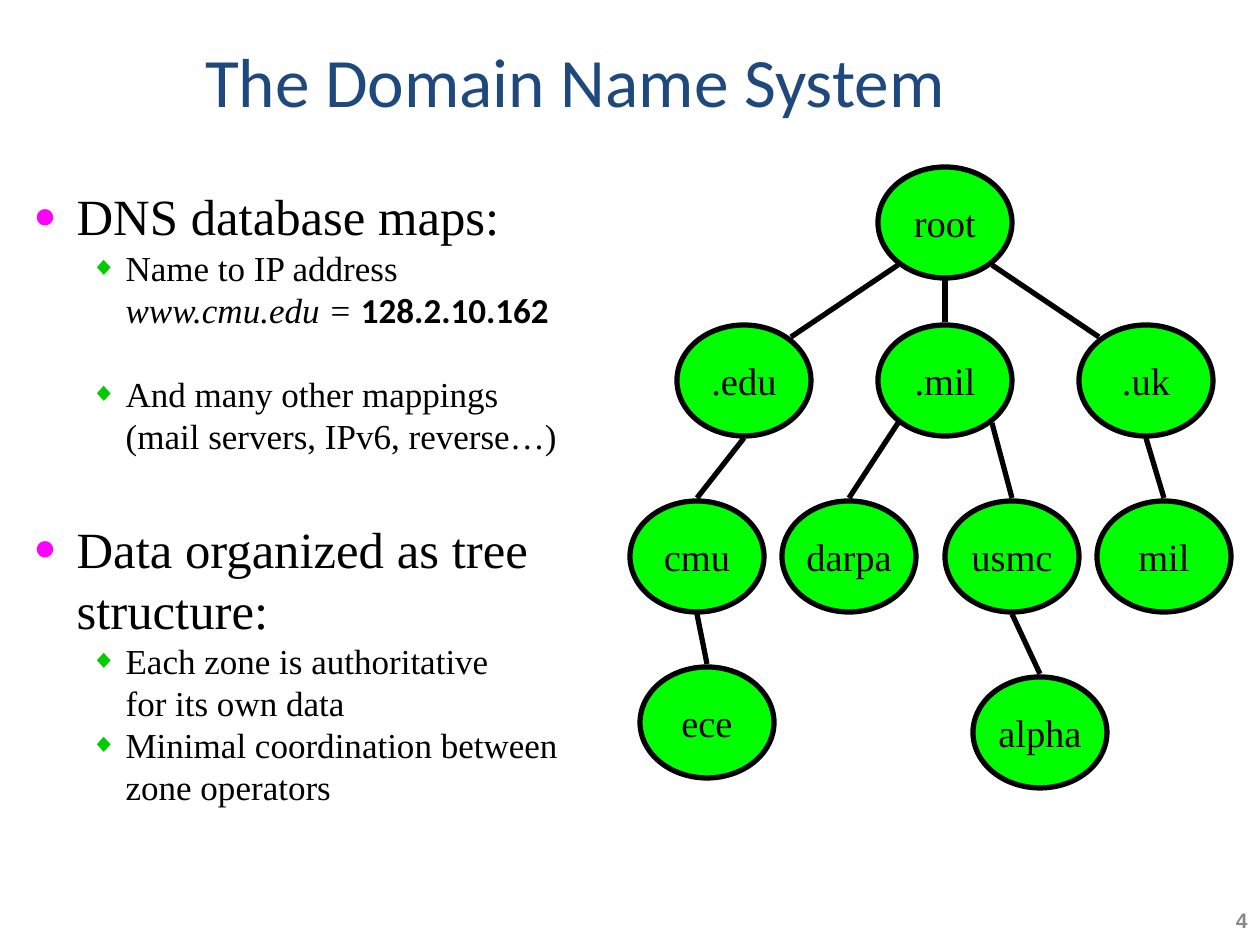
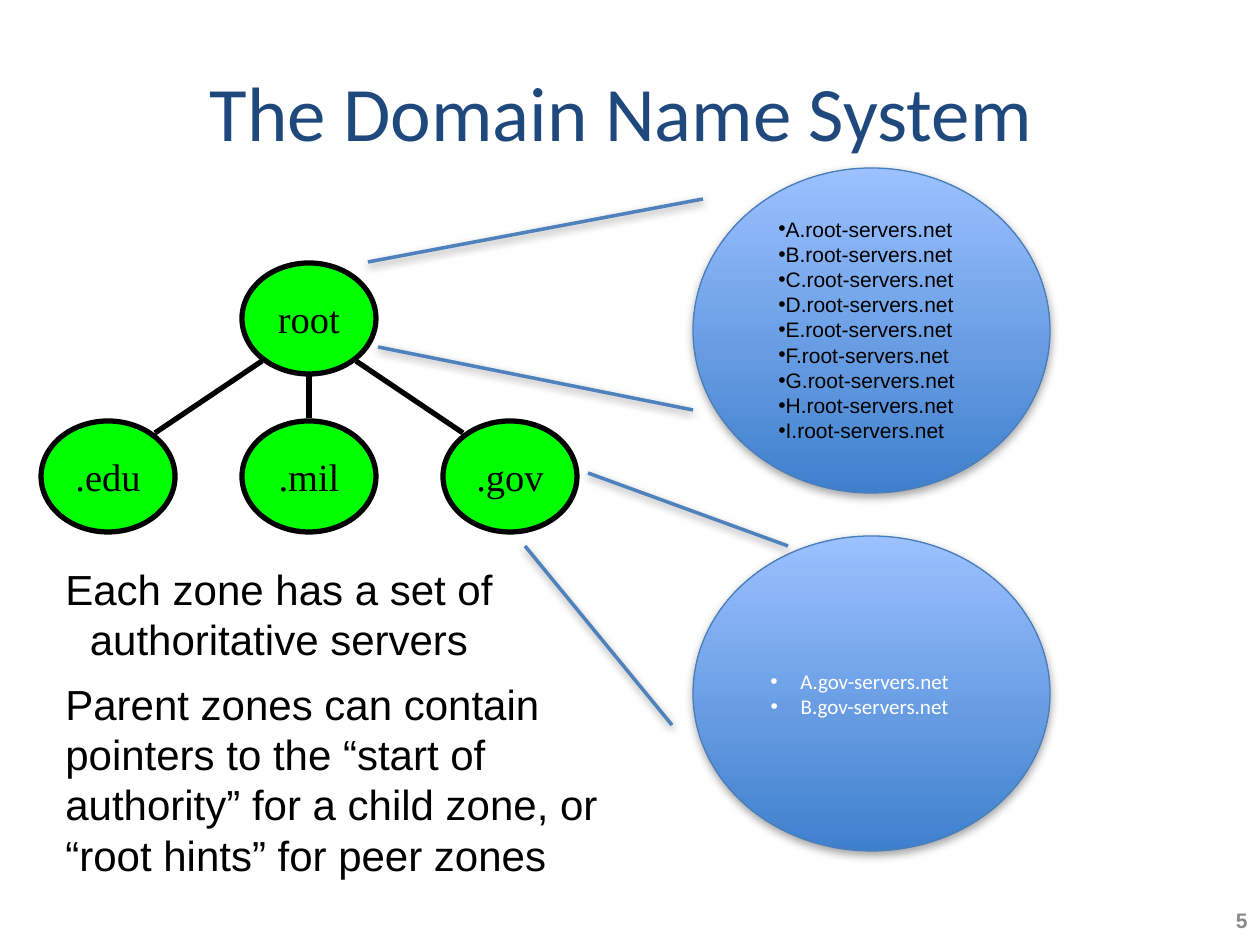
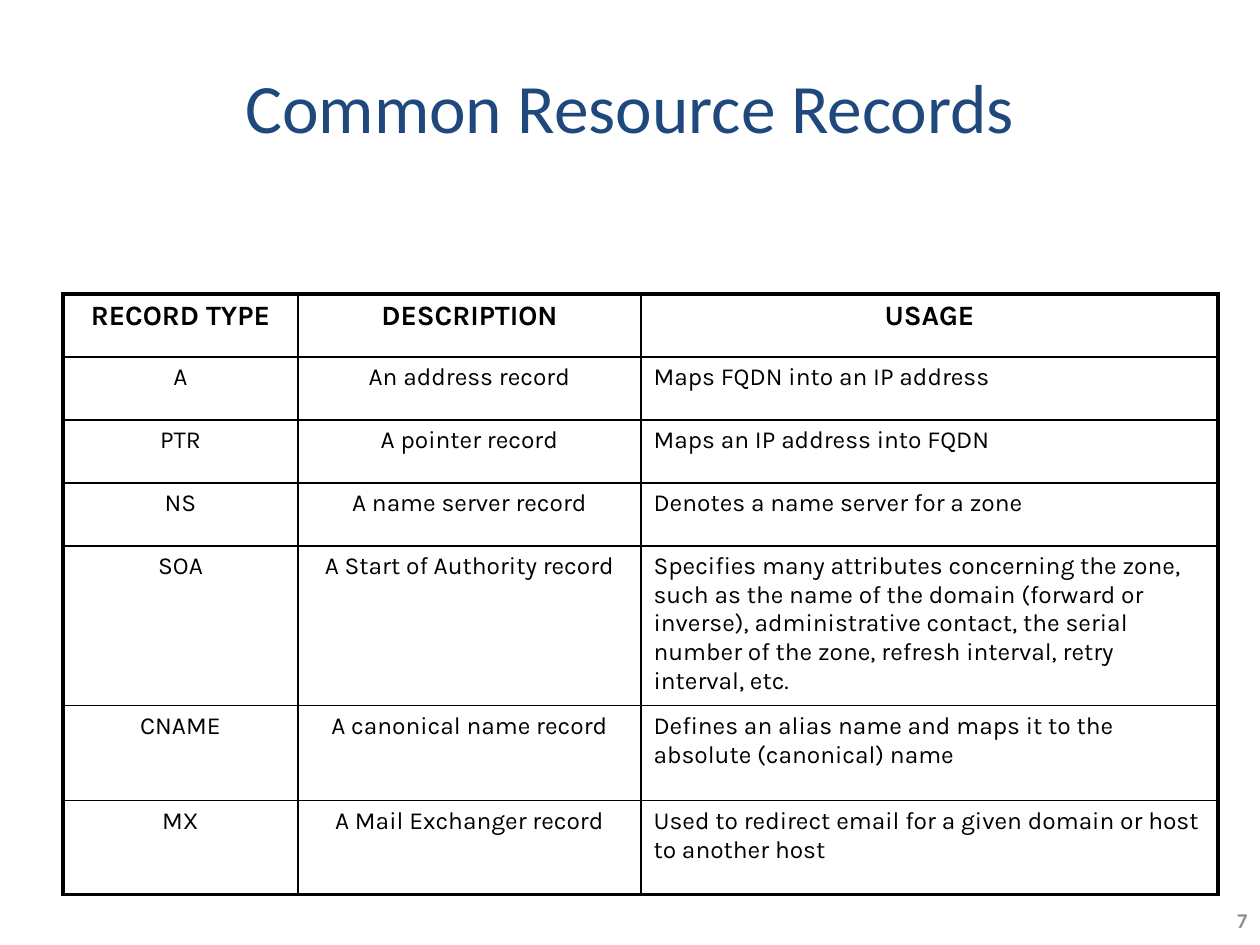
import lxml.etree
import pptx
import pptx.dml.color
import pptx.enum.shapes
import pptx.enum.text
import pptx.oxml.ns
import pptx.util

PX_PER_INCH = 126
SERIF, SANS, TITLE_FONT, TABLE_FONT = "Times New Roman", "Arial", "Calibri", "Karla"
BLACK, WHITE, NAVY, GREY = "000000", "FFFFFF", "1F497D", "898989"
NODE_GREEN, LEVEL_COLORS = "00FF00", ("FF00FF", "00CC00")
BLUE_DARK, BLUE_LIGHT, BLUE_EDGE, BLUE_LINE = "3F80CD", "9BC1FF", "4A7EBB", "4F81BD"
LINE_FACTOR = 1.2

ALIGN = pptx.enum.text.PP_ALIGN
MIDDLE = pptx.enum.text.MSO_ANCHOR.MIDDLE
OVAL = pptx.enum.shapes.MSO_SHAPE.OVAL
STRAIGHT = pptx.enum.shapes.MSO_CONNECTOR.STRAIGHT

NODE_WIDTH, NODE_HEIGHT = 134, 111
BRANCH, LEVEL = 201, 158
ANCHORS = {
    "top": (0, -58),
    "top left": (-47, -43),
    "top right": (47, -43),
    "bottom": (0, 58),
    "bottom left": (-47, 43),
    "bottom right": (47, 43),
}
ROOT_LINKS = ("bottom left", "top right"), ("bottom", "top"), ("bottom right", "top left")

RECORDS = [
    ("RECORD TYPE", "DESCRIPTION", "USAGE"),
    ("A", "An address record", "Maps FQDN into an IP address"),
    ("PTR", "A pointer record", "Maps an IP address into FQDN"),
    ("NS", "A name server record", "Denotes a name server for a zone"),
    ("SOA", "A Start of Authority record",
     "Specifies many attributes concerning the zone, such as the name of the domain "
     "(forward or inverse), administrative contact, the serial number of the zone, "
     "refresh interval, retry interval, etc."),
    ("CNAME", "A canonical name record",
     "Defines an alias name and maps it to the absolute (canonical) name"),
    ("MX", "A Mail Exchanger record",
     "Used to redirect email for a given domain or host to another host"),
]


def px(length):
    return pptx.util.Emu(round(length * 914400 / PX_PER_INCH))


def rgb(color):
    return pptx.dml.color.RGBColor.from_string(color)


def add_xml(parent, tag, **attributes):
    return lxml.etree.SubElement(parent, pptx.oxml.ns.qn(tag), attributes)


def style(para, size, font, color=BLACK, align=ALIGN.LEFT, bold=False):
    para.alignment = align
    for span in para.runs:
        span.font.size = pptx.util.Pt(size)
        span.font.name = font
        span.font.bold = bold
        span.font.color.rgb = rgb(color)


def set_pitch(para, size):
    para.line_spacing = pptx.util.Pt(round(size * LINE_FACTOR, 1))


def set_bullet(para, symbol, left=0, hang=0, color=None, percent=100):
    properties = para._p.get_or_add_pPr()
    properties.set("marL", str(px(left)))
    properties.set("indent", str(-px(hang)))
    if color:
        add_xml(add_xml(properties, "a:buClr"), "a:srgbClr", val=color)
    add_xml(properties, "a:buSzPct", val=str(percent * 1000))
    add_xml(properties, "a:buFont", typeface=SANS)
    add_xml(properties, "a:buChar", char=symbol)


def set_shadow(shape, alpha=0, distance=0):
    properties = shape._element.spPr
    effects = properties.find(pptx.oxml.ns.qn("a:effectLst"))
    if effects is None:
        effects = add_xml(properties, "a:effectLst")
    if alpha:
        shadow = add_xml(effects, "a:outerShdw", blurRad="63500", dist=str(distance),
                         dir="5400000", rotWithShape="0")
        color = add_xml(shadow, "a:srgbClr", val=BLACK)
        add_xml(color, "a:alpha", val=str(alpha * 1000))


def place(shape, box):
    shape.left, shape.top, shape.width, shape.height = map(px, box)


def add_line(page, start, end, color, width):
    line = page.shapes.add_connector(STRAIGHT, *map(px, start + end))
    line.line.color.rgb = rgb(color)
    line.line.width = pptx.util.Pt(width)
    set_shadow(line)
    return line


def add_oval(page, box, edge, width):
    oval = page.shapes.add_shape(OVAL, *map(px, box))
    oval.shadow.inherit = False
    oval.line.color.rgb = rgb(edge)
    oval.line.width = pptx.util.Pt(width)
    oval.text_frame.vertical_anchor = MIDDLE
    return oval


def add_text(page, box, lines, size, font, color=BLACK, align=ALIGN.LEFT, bold=False, wrap=True):
    frame = page.shapes.add_textbox(*map(px, box)).text_frame
    frame.word_wrap = wrap
    frame.text = "\n".join(lines)
    for para in frame.paragraphs:
        style(para, size, font, color, align, bold)
        set_pitch(para, size)
    return frame


def add_page(deck, layout, title, box, size, number, number_font=SANS, number_color=GREY):
    page = deck.slides.add_slide(deck.slide_layouts.get_by_name(layout))
    place(page.shapes.title, box)
    frame = page.shapes.title.text_frame
    frame.auto_size = pptx.enum.text.MSO_AUTO_SIZE.NONE
    frame.vertical_anchor = MIDDLE
    frame.text = title
    style(frame.paragraphs[0], size, TITLE_FONT, NAVY, ALIGN.CENTER)
    footer = add_text(page, (1173, 895, 87, 50), [number], 12, number_font, number_color,
                      ALIGN.RIGHT, True)
    footer.vertical_anchor = MIDDLE
    return page


def draw_tree(page, origin, nodes, links):
    centers = {name: (origin[0] + x, origin[1] + y) for name, (x, y) in nodes.items()}
    for name, (x, y) in centers.items():
        box = x - NODE_WIDTH // 2, y - NODE_HEIGHT // 2, NODE_WIDTH, NODE_HEIGHT
        node = add_oval(page, box, BLACK, 3)
        node.fill.solid()
        node.fill.fore_color.rgb = rgb(NODE_GREEN)
        frame = node.text_frame
        frame.word_wrap = False
        frame.margin_left = frame.margin_right = px(11)
        frame.margin_top = frame.margin_bottom = px(5)
        frame.text = name
        style(frame.paragraphs[0], 22, SERIF, align=ALIGN.CENTER)
    for parent, parent_side, child, child_side in links:
        ends = [tuple(map(sum, zip(centers[name], ANCHORS[side])))
                for name, side in ((child, child_side), (parent, parent_side))]
        add_line(page, *ends, BLACK, 3)


def top_zones(names):
    nodes = {"root": (0, 0)}
    links = []
    for column, (name, (parent_side, child_side)) in enumerate(zip(names, ROOT_LINKS), -1):
        nodes[name] = column * BRANCH, LEVEL
        links.append(("root", parent_side, name, child_side))
    return nodes, links


def fill_outline(body, box):
    items = [
        (0, "DNS database maps:", 0),
        (1, "Name to IP address\vwww.cmu.edu = ", 0),
        (1, "And many other mappings\v(mail servers, IPv6, reverse…)", 24),
        (0, "Data organized as tree structure:", 35),
        (1, "Each zone is authoritative\vfor its own data", 0),
        (1, "Minimal coordination between zone operators", 0),
    ]
    place(body, box)
    frame = body.text_frame
    frame.auto_size = pptx.enum.text.MSO_AUTO_SIZE.NONE
    frame.text = "\n".join("-" for _ in items)
    for para, (level, text, gap) in zip(frame.paragraphs, items):
        size = (29, 20)[level]
        para.text = text
        para.level = level
        para.space_before = pptx.util.Pt(gap)
        set_pitch(para, size)
        set_bullet(para, "●◆"[level], (43, 92)[level], (43, 35)[level], LEVEL_COLORS[level], 75)
        style(para, size, SERIF)
    example = frame.paragraphs[1]
    example.runs[1].font.italic = True
    address = example.add_run()
    address.text = "128.2.10.162"
    address.font.size = pptx.util.Pt(20)
    address.font.name = TITLE_FONT
    address.font.bold = True
    address.font.color.rgb = rgb(BLACK)


def add_server_oval(page, box):
    oval = add_oval(page, box, BLUE_EDGE, 0.75)
    oval.fill.gradient()
    oval.fill.gradient_angle = 90
    for stop, color in zip(oval.fill.gradient_stops, (BLUE_DARK, BLUE_LIGHT)):
        stop.color.rgb = rgb(color)
    set_shadow(oval, 35, 23000)
    return oval


def draw_servers(page, left, top):
    gov_frame = add_server_oval(page, (left, top + 368, 357, 315)).text_frame
    gov_frame.word_wrap = True
    gov_frame.margin_right = px(36)
    gov_frame.text = "\n".join(f"{letter}.gov-servers.net" for letter in "AB")
    for para in gov_frame.paragraphs:
        style(para, 12, TITLE_FONT, WHITE, ALIGN.CENTER)
        set_bullet(para, "•", 30, 30)
    add_server_oval(page, (left, top, 357, 325))
    callouts = [
        ((-325, 94), (10, 31)),
        ((-315, 179), (0, 242)),
        ((-168, 378), (-21, 557)),
        ((-105, 305), (95, 378)),
    ]
    for start, end in callouts:
        line = add_line(page, (left + start[0], top + start[1]),
                        (left + end[0], top + end[1]), BLUE_LINE, 2)
        set_shadow(line, 38, 20000)
    names = [f"{letter}.root-servers.net" for letter in "ABCDEFGHI"]
    frame = add_text(page, (left + 73, top + 42, 204, 242), names, 12, SANS, wrap=False)
    for para in frame.paragraphs:
        set_bullet(para, "•")


def set_borders(cell, widths):
    properties = cell._tc.get_or_add_tcPr()
    for index, (side, width) in enumerate(zip("LRTB", widths)):
        border = add_xml(properties, "a:ln" + side, w=str(pptx.util.Pt(width)))
        add_xml(add_xml(border, "a:solidFill"), "a:srgbClr", val=BLACK)
        properties.insert(index, border)


def draw_records(page, left, top):
    widths = 235, 343, 577
    heights = 63, 63, 63, 63, 157, 95, 94
    frame = page.shapes.add_table(len(heights), len(widths), px(left), px(top),
                                  px(sum(widths)), px(sum(heights)))
    table = frame.table
    table.first_row = table.horz_banding = False
    for column, width in zip(table.columns, widths):
        column.width = px(width)
    for row, height in zip(table.rows, heights):
        row.height = px(height)
    last_row, last_column = len(heights) - 1, len(widths) - 1
    for row, texts in enumerate(RECORDS):
        header = row == 0
        for column, text in enumerate(texts):
            cell = table.cell(row, column)
            cell.text = text
            centered = header or column < last_column
            style(cell.text_frame.paragraphs[0], 16 if header else 14, TABLE_FONT,
                  align=ALIGN.CENTER if centered else ALIGN.LEFT, bold=header)
            cell.fill.background()
            outer = column == 0, column == last_column, header, row == last_row
            set_borders(cell, [2.25 if edge else 1 for edge in outer])


def build_domain_page(deck):
    page = add_page(deck, "Title and Content", "The Domain Name System",
                    (63, 32, 1024, 96), 39.6, "4")
    fill_outline(page.placeholders[1], (21, 179, 617, 690))
    nodes, links = top_zones((".edu", ".mil", ".uk"))
    nodes |= {
        "darpa": (-96, 334), "cmu": (-248, 334), "mil": (219, 334), "usmc": (67, 334),
        "ece": (-238, 500), "alpha": (95, 510),
    }
    links += [
        (".mil", "bottom left", "darpa", "top"),
        (".mil", "bottom right", "usmc", "top"),
        (".uk", "bottom", "mil", "top"),
        (".edu", "bottom", "cmu", "top"),
        ("cmu", "bottom", "ece", "top"),
        ("usmc", "bottom", "alpha", "top"),
    ]
    draw_tree(page, (945, 222), nodes, links)


def build_server_page(deck):
    page = add_page(deck, "Title Only", "The Domain Name System ",
                    (63, 32, 1134, 157), 44, "5")
    draw_tree(page, (309, 318), *top_zones((".edu", ".mil", ".gov")))
    draw_servers(page, 693, 168)
    add_text(page, (32, 557, 494, 115), ["Each zone has a set of authoritative servers"],
             24, SANS, align=ALIGN.CENTER)
    add_text(page, (53, 672, 598, 217),
             ["Parent zones can contain pointers to the “start of authority” "
              "for a child zone, or “root hints” for peer zones"], 24, SANS)


def build_record_page(deck):
    page = add_page(deck, "Title Only", "Common Resource Records",
                    (63, 0, 1134, 126), 39.6, "7", TITLE_FONT, "8C8C8C")
    page.shapes.title.text_frame.margin_top = px(92)
    draw_records(page, 63, 294)


def main():
    deck = pptx.Presentation()
    deck.slide_width, deck.slide_height = px(1260), px(945)
    build_domain_page(deck)
    build_server_page(deck)
    build_record_page(deck)
    deck.save("out.pptx")


if __name__ == "__main__":
    main()
